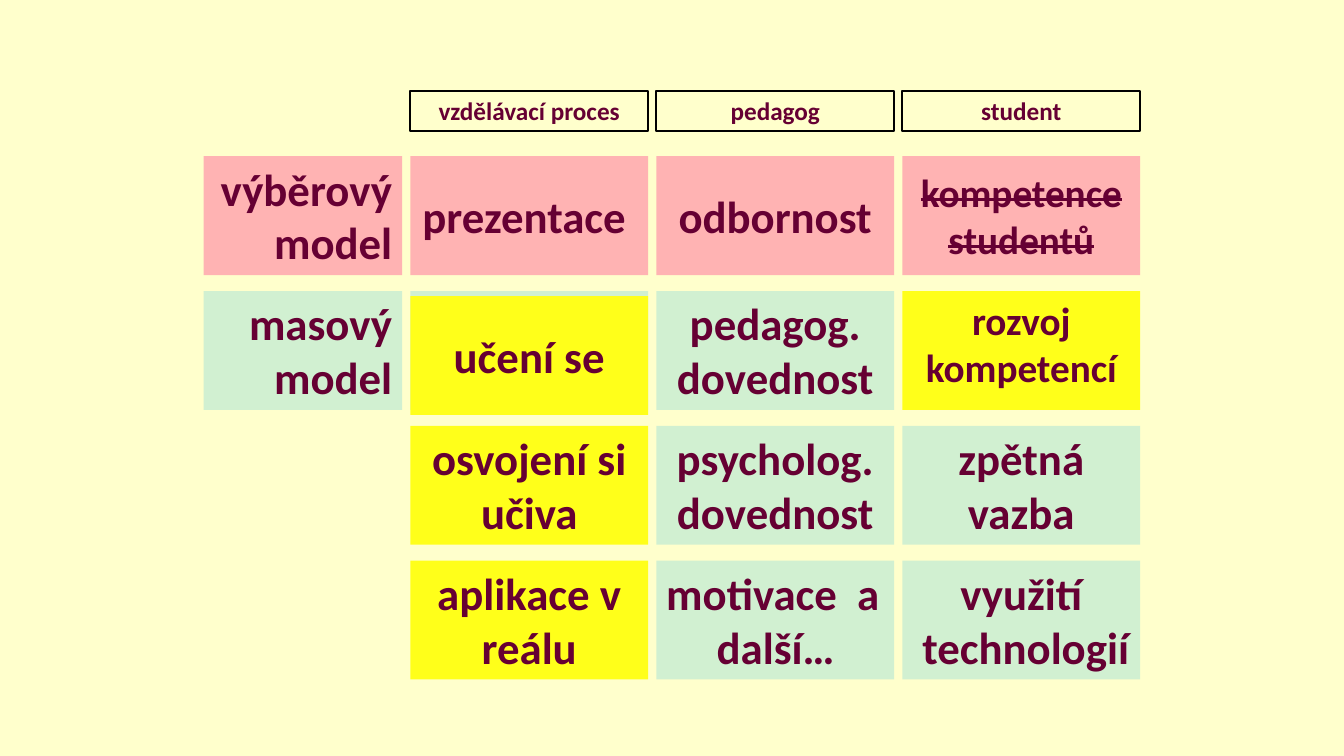
import dataclasses

import pptx
import pptx.dml.color
import pptx.enum.shapes
import pptx.enum.text
import pptx.util

Inches = pptx.util.Inches
ALIGN = pptx.enum.text.PP_ALIGN
ANCHOR = pptx.enum.text.MSO_ANCHOR

COLORS = {
    "background": "FFFFCC",
    "text": "660033",
    "border": "000000",
    "pink": "FFB3B3",
    "green": "D1F0D1",
    "yellow": "FFFF1A",
}
FONT = "Calibri"

MODEL_LEFT, MODEL_WIDTH = 2.02, 1.97
COLUMN_LEFT, COLUMN_PITCH, COLUMN_WIDTH = 4.07, 2.44, 2.36
ROW_TOP, ROW_PITCH, ROW_HEIGHT = 1.55, 1.337, 1.18
HEADER_TOP, HEADER_HEIGHT = 0.9, 0.4
HANGING = 0.5


@dataclasses.dataclass
class Cell:
    """A box of the grid; column 0 holds the model names."""
    column: int
    row: int
    text: str
    fill: str
    size: int = 32
    align: ALIGN = ALIGN.CENTER
    anchor: ANCHOR = ANCHOR.TOP
    hanging: float = 0
    strike: bool = False
    drop: float = 0


HEADERS = ["vzdělávací proces", "pedagog", "student"]

CELLS = [
    Cell(0, 0, "výběrový model", "pink", align=ALIGN.RIGHT, hanging=HANGING),
    Cell(1, 0, "prezentace ", "pink", anchor=ANCHOR.MIDDLE, hanging=HANGING),
    Cell(2, 0, "odbornost", "pink", anchor=ANCHOR.MIDDLE, hanging=HANGING),
    Cell(3, 0, "kompetence studentů", "pink", size=28, anchor=ANCHOR.MIDDLE, strike=True),
    Cell(0, 1, "masový model", "green", align=ALIGN.RIGHT, hanging=HANGING),
    Cell(1, 1, "", "green"),
    Cell(1, 1, "učení se", "yellow", anchor=ANCHOR.MIDDLE, hanging=HANGING, drop=0.05),
    Cell(2, 1, "pedagog. dovednost", "green"),
    Cell(3, 1, "rozvoj kompetencí", "yellow", size=28),
    Cell(1, 2, "osvojení si učiva", "yellow"),
    Cell(2, 2, "psycholog. dovednost", "green"),
    Cell(3, 2, "zpětná vazba", "green"),
    Cell(1, 3, "aplikace v reálu", "yellow"),
    Cell(2, 3, "motivace  a další…", "green", align=ALIGN.LEFT, hanging=HANGING),
    Cell(3, 3, "využití technologií", "green", hanging=0.09),
]


def rgb(name: str) -> pptx.dml.color.RGBColor:
    return pptx.dml.color.RGBColor.from_string(COLORS[name])


def column_left(column: int) -> float:
    return COLUMN_LEFT + (column - 1) * COLUMN_PITCH if column else MODEL_LEFT


def add_box(slide: pptx.slide.Slide, left: float, top: float, width: float,
            height: float) -> pptx.shapes.autoshape.Shape:
    s = slide.shapes.add_shape(
        pptx.enum.shapes.MSO_SHAPE.RECTANGLE,
        Inches(left), Inches(top), Inches(width), Inches(height))
    s.shadow.inherit = False
    return s


def write(s: pptx.shapes.autoshape.Shape, text: str, *, size: int,
          align: ALIGN = ALIGN.CENTER, anchor: ANCHOR = ANCHOR.TOP,
          hanging: float = 0, strike: bool = False) -> None:
    tf = s.text_frame
    tf.word_wrap = True
    tf.auto_size = pptx.enum.text.MSO_AUTO_SIZE.SHAPE_TO_FIT_TEXT
    tf.vertical_anchor = anchor
    p = tf.paragraphs[0]
    p.alignment = align
    if hanging:
        props = p._p.get_or_add_pPr()
        props.set("marL", str(Inches(hanging)))
        props.set("indent", str(-Inches(hanging)))
    r = p.add_run()
    r.text = text
    r.font.name = FONT
    r.font.size = pptx.util.Pt(size)
    r.font.bold = True
    r.font.color.rgb = rgb("text")
    if strike:
        r._r.get_or_add_rPr().set("strike", "sngStrike")


def add_header(slide: pptx.slide.Slide, column: int, text: str) -> None:
    s = add_box(slide, column_left(column), HEADER_TOP, COLUMN_WIDTH, HEADER_HEIGHT)
    s.fill.background()
    s.line.color.rgb = rgb("border")
    s.line.width = pptx.util.Pt(1.5)
    write(s, text, size=18)


def add_cell(slide: pptx.slide.Slide, cell: Cell) -> None:
    top = ROW_TOP + cell.row * ROW_PITCH + cell.drop
    width = COLUMN_WIDTH if cell.column else MODEL_WIDTH
    s = add_box(slide, column_left(cell.column), top, width, ROW_HEIGHT)
    s.fill.solid()
    s.fill.fore_color.rgb = rgb(cell.fill)
    s.line.fill.background()
    if cell.text:
        write(s, cell.text, size=cell.size, align=cell.align, anchor=cell.anchor,
              hanging=cell.hanging, strike=cell.strike)


def main() -> None:
    prs = pptx.Presentation()
    prs.slide_width = Inches(13.33)
    prs.slide_height = Inches(7.5)
    slide = prs.slides.add_slide(prs.slide_layouts[6])
    slide.background.fill.solid()
    slide.background.fill.fore_color.rgb = rgb("background")
    for column, text in enumerate(HEADERS, start=1):
        add_header(slide, column, text)
    for cell in CELLS:
        add_cell(slide, cell)
    prs.save("out.pptx")


if __name__ == "__main__":
    main()
